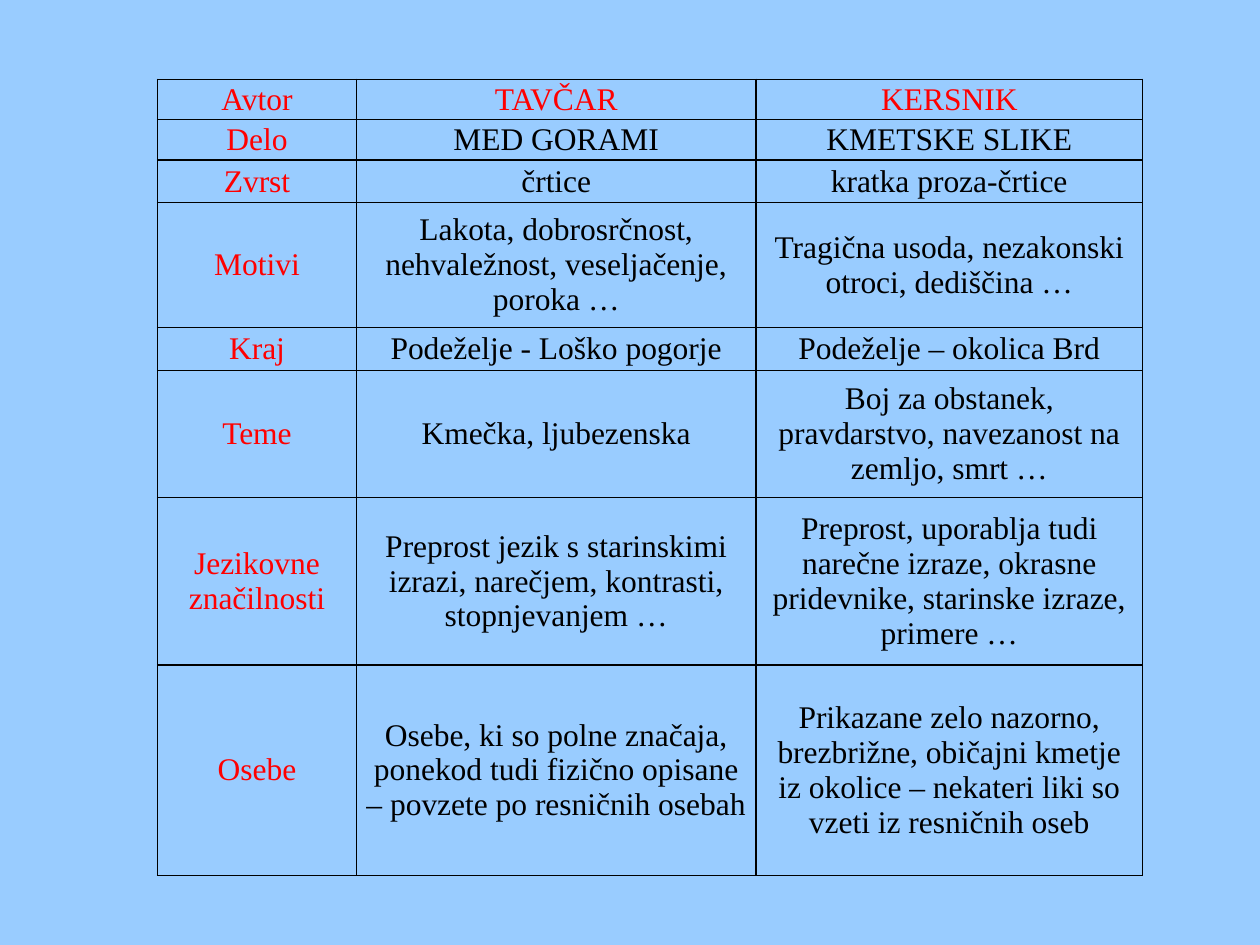
from dataclasses import dataclass

from lxml import etree
from pptx import Presentation
from pptx.dml.color import RGBColor
from pptx.enum import text
from pptx.oxml import ns
from pptx.util import Inches, Pt


@dataclass(frozen=True)
class Theme:
    background: RGBColor = RGBColor(0x99, 0xCC, 0xFF)
    heading: RGBColor = RGBColor(0xFF, 0x00, 0x00)
    body: RGBColor = RGBColor(0x00, 0x00, 0x00)
    border: str = "000000"
    border_width: Pt = Pt(1)
    font: str = "Times New Roman"
    size: Pt = Pt(18)


theme = Theme()

comparison = [
    ("Avtor", "TAVČAR", "KERSNIK"),
    ("Delo", "MED GORAMI", "KMETSKE SLIKE"),
    ("Zvrst", "črtice", "kratka proza-črtice"),
    ("Motivi",
     "Lakota, dobrosrčnost, nehvaležnost, veseljačenje, poroka …",
     "Tragična usoda, nezakonski otroci, dediščina …"),
    ("Kraj", "Podeželje - Loško pogorje", "Podeželje – okolica Brd"),
    ("Teme",
     "Kmečka, ljubezenska",
     "Boj za obstanek, pravdarstvo, navezanost na zemljo, smrt …"),
    ("Jezikovne značilnosti",
     "Preprost jezik s starinskimi izrazi, narečjem, kontrasti, stopnjevanjem …",
     "Preprost, uporablja tudi narečne izraze, okrasne pridevnike, "
     "starinske izraze, primere …"),
    ("Osebe",
     "Osebe, ki so polne značaja, ponekod tudi fizično opisane "
     "– povzete po resničnih osebah",
     "Prikazane zelo nazorno, brezbrižne, običajni kmetje iz okolice "
     "– nekateri liki so vzeti iz resničnih oseb"),
]
column_widths = [1.58, 3.17, 3.07]
row_heights = [0.32, 0.32, 0.34, 0.99, 0.34, 1.01, 1.33, 1.67]


def add_borders(cell):
    """Draw all four sides; the lines must come before the fill in tcPr."""
    properties = cell._tc.get_or_add_tcPr()
    for position, side in enumerate(("lnL", "lnR", "lnT", "lnB")):
        line = etree.Element(ns.qn(f"a:{side}"), w=str(theme.border_width))
        solid = etree.SubElement(line, ns.qn("a:solidFill"))
        etree.SubElement(solid, ns.qn("a:srgbClr"), val=theme.border)
        properties.insert(position, line)


prs = Presentation()
prs.slide_width, prs.slide_height = Inches(10), Inches(7.5)
slide = prs.slides.add_slide(prs.slide_layouts[6])
slide.background.fill.solid()
slide.background.fill.fore_color.rgb = theme.background

table = slide.shapes.add_table(
    len(row_heights), len(column_widths), Inches(1.25), Inches(0.63),
    Inches(sum(column_widths)), Inches(sum(row_heights))).table
table.first_row = table.horz_banding = False
for column, width in zip(table.columns, column_widths):
    column.width = Inches(width)
for row, height in zip(table.rows, row_heights):
    row.height = Inches(height)

for r, entries in enumerate(comparison):
    for c, entry in enumerate(entries):
        cell = table.cell(r, c)
        cell.fill.background()
        add_borders(cell)
        cell.vertical_anchor = text.MSO_ANCHOR.MIDDLE
        cell.margin_left = cell.margin_right = Inches(0.07)
        cell.margin_top = cell.margin_bottom = 0
        paragraph = cell.text_frame.paragraphs[0]
        paragraph.alignment = text.PP_ALIGN.CENTER
        run = paragraph.add_run()
        run.text = entry
        run.font.name = theme.font
        run.font.size = theme.size
        run.font.color.rgb = theme.heading if r == 0 or c == 0 else theme.body

prs.save("out.pptx")
